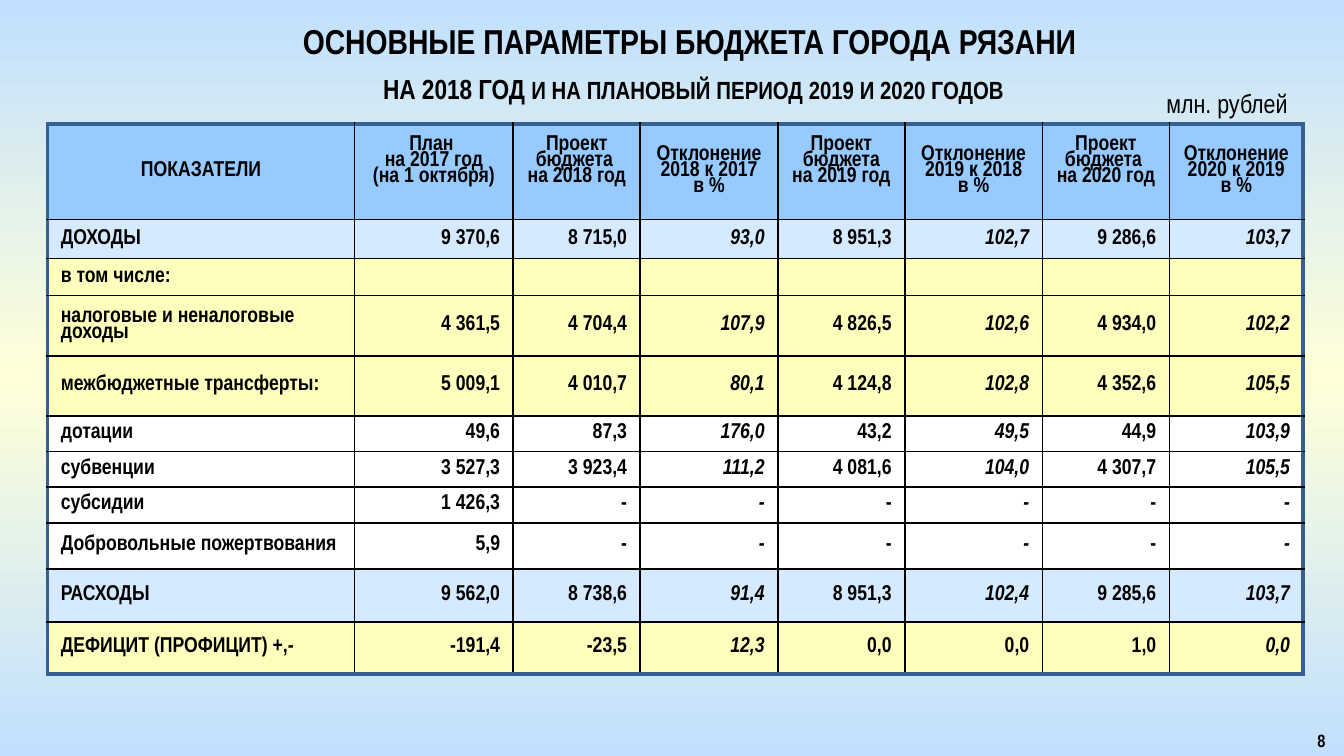
from copy import deepcopy
from pptx import Presentation as Deck
from pptx.dml.color import RGBColor as Rgb
from pptx.enum.text import MSO_ANCHOR as Anchor, PP_ALIGN as Align
from pptx.oxml import parse_xml
from pptx.oxml.ns import nsdecls, qn
from pptx.util import Cm, Pt

HUES = {
    "ink": "000000", "edge": "376092", "head": "97CBFF", "blue": "D5EAFF",
    "cream": "FFFFBD", "white": "FFFFFF", "sky": "C1E0FF", "sun": "FFFFD9",
}
FONT = "Arial Narrow"
WIDTHS = [5.8, 3, 2.4, 2.6, 2.4, 2.6, 2.4, 2.53]
HEADS = [
    "ПОКАЗАТЕЛИ",
    "План \nна 2017 год\n(на 1 октября)",
    "Проект бюджета \nна 2018 год",
    "Отклонение\n2018 к 2017\nв %",
    "Проект бюджета\nна 2019 год",
    "Отклонение\n2019 к 2018\nв %",
    "Проект бюджета \nна 2020 год",
    "Отклонение\n2020 к 2019\nв %",
]
NONE = ["-"] * 6
ROWS = [
    (1.81, "head", HEADS),
    (0.74, "blue", ["ДОХОДЫ", "9 370,6", "8 715,0", "93,0", "8 951,3", "102,7", "9 286,6", "103,7"]),
    (0.67, "cream", ["в том числе:"] + [""] * 7),
    (1.14, "cream", ["налоговые и неналоговые доходы", "4 361,5", "4 704,4", "107,9", "4 826,5", "102,6", "4 934,0", "102,2"]),
    (1.14, "cream", ["межбюджетные трансферты:", "5 009,1", "4 010,7", "80,1", "4 124,8", "102,8", "4 352,6", "105,5"]),
    (0.67, "white", ["дотации", "49,6", "87,3", "176,0", "43,2", "49,5", "44,9", "103,9"]),
    (0.67, "white", ["субвенции", "3 527,3", "3 923,4", "111,2", "4 081,6", "104,0", "4 307,7", "105,5"]),
    (0.68, "white", ["субсидии", "1 426,3"] + NONE),
    (0.87, "white", ["Добровольные пожертвования", "5,9"] + NONE),
    (1, "blue", ["РАСХОДЫ", "9 562,0", "8 738,6", "91,4", "8 951,3", "102,4", "9 285,6", "103,7"]),
    (0.99, "cream", ["ДЕФИЦИТ (ПРОФИЦИТ) +,-", "-191,4", "-23,5", "12,3", "0,0", "0,0", "1,0", "0,0"]),
]
SLANTED = {3, 5, 7}
UPRIGHT = {(10, 5)}


def add_run(para, text, size=11.5, bold=True, slant=False, small=False):
    run = para.add_run()
    run.text = text
    font = run.font
    font.name, font.size, font.bold, font.italic = FONT, Pt(size), bold, slant
    font.color.rgb = Rgb.from_string(HUES["ink"])
    if small:
        run._r.get_or_add_rPr().set("cap", "small")


class Page:
    def __init__(self, slide):
        self.slide = slide

    def paint(self):
        fill = self.slide.background.fill
        fill.gradient()
        fill.gradient_angle = 90
        stops = self.slide.element.find(".//" + qn("a:gsLst"))
        stops.append(deepcopy(stops[0]))
        for stop, place, hue in zip(fill.gradient_stops, (0, 0.5, 1), ("sky", "sun", "sky")):
            stop.position = place
            stop.color.rgb = Rgb.from_string(HUES[hue])

    def label(self, place, align, anchor=Anchor.MIDDLE, gap=1):
        frame = self.slide.shapes.add_textbox(*map(Cm, place)).text_frame
        frame.word_wrap = True
        frame.vertical_anchor = anchor
        para = frame.paragraphs[0]
        para.alignment, para.line_spacing = align, gap
        return para

    def edges(self, cell, sides):
        props = cell._tc.get_or_add_tcPr()
        for spot, (side, outer) in enumerate(sides):
            hue, width = ("edge", 2.25) if outer else ("ink", 1)
            props.insert(spot, parse_xml(
                f'<a:ln{side} {nsdecls("a")} w="{Pt(width)}"><a:solidFill>'
                f'<a:srgbClr val="{HUES[hue]}"/></a:solidFill></a:ln{side}>'))

    def fill_cell(self, cell, text, align, hue, slant):
        cell.fill.solid()
        cell.fill.fore_color.rgb = Rgb.from_string(HUES[hue])
        cell.vertical_anchor = Anchor.MIDDLE
        cell.margin_left = cell.margin_right = Cm(0.25)
        cell.margin_top = cell.margin_bottom = Cm(0.1)
        frame = cell.text_frame
        for spot, line in enumerate(text.split("\n")):
            para = frame.add_paragraph() if spot else frame.paragraphs[0]
            para.alignment, para.line_spacing = align, 0.81
            if line:
                add_run(para, line, slant=slant)
            else:
                para._p.append(parse_xml(f'<a:endParaRPr {nsdecls("a")} sz="1150"/>'))

    def grid(self, left, top):
        size = Cm(sum(WIDTHS)), Cm(sum(row[0] for row in ROWS))
        grid = self.slide.shapes.add_table(
            len(ROWS), len(WIDTHS), Cm(left), Cm(top), *size).table
        grid.first_row = grid.horz_banding = False
        for col, width in zip(grid.columns, WIDTHS):
            col.width = Cm(width)
        for y, (height, hue, texts) in enumerate(ROWS):
            grid.rows[y].height = Cm(height)
            for x, text in enumerate(texts):
                cell = grid.cell(y, x)
                align = Align.CENTER if y == 0 else Align.RIGHT if x else Align.LEFT
                slant = y > 0 and x in SLANTED and (y, x) not in UPRIGHT
                self.fill_cell(cell, text, align, hue, slant)
                if y == 0 and x in (1, 2, 4, 6):
                    cell.margin_bottom = Cm(0.48)
                self.edges(cell, [
                    ("L", x == 0), ("R", x == len(WIDTHS) - 1),
                    ("T", y == 0), ("B", y == len(ROWS) - 1)])


def main():
    deck = Deck()
    deck.slide_width, deck.slide_height = Cm(25.4), Cm(14.29)
    page = Page(deck.slides.add_slide(deck.slide_layouts[6]))
    page.paint()
    page.grid(0.9, 2.34)
    unit = page.label((21.49, 1.55, 3.4, 0.79), Align.CENTER)
    add_run(unit, "млн. рублей", size=14, bold=False)
    title = page.label((0.71, 0.36, 24.79, 1.6), Align.CENTER, gap=1.1)
    add_run(title, "ОСНОВНЫЕ ПАРАМЕТРЫ БЮДЖЕТА ГОРОДА РЯЗАНИ ", size=18.5)
    title.add_line_break()
    add_run(title, "на 2018 год ", size=18.5, small=True)
    add_run(title, "и на плановый период 2019 и 2020 годов", size=16.6, small=True)
    number = page.label((23.98, 13.59, 1.32, 0.66), Align.RIGHT, Anchor.TOP)
    add_run(number, "8", size=11.9, small=True)
    deck.save("out.pptx")


if __name__ == "__main__":
    main()
